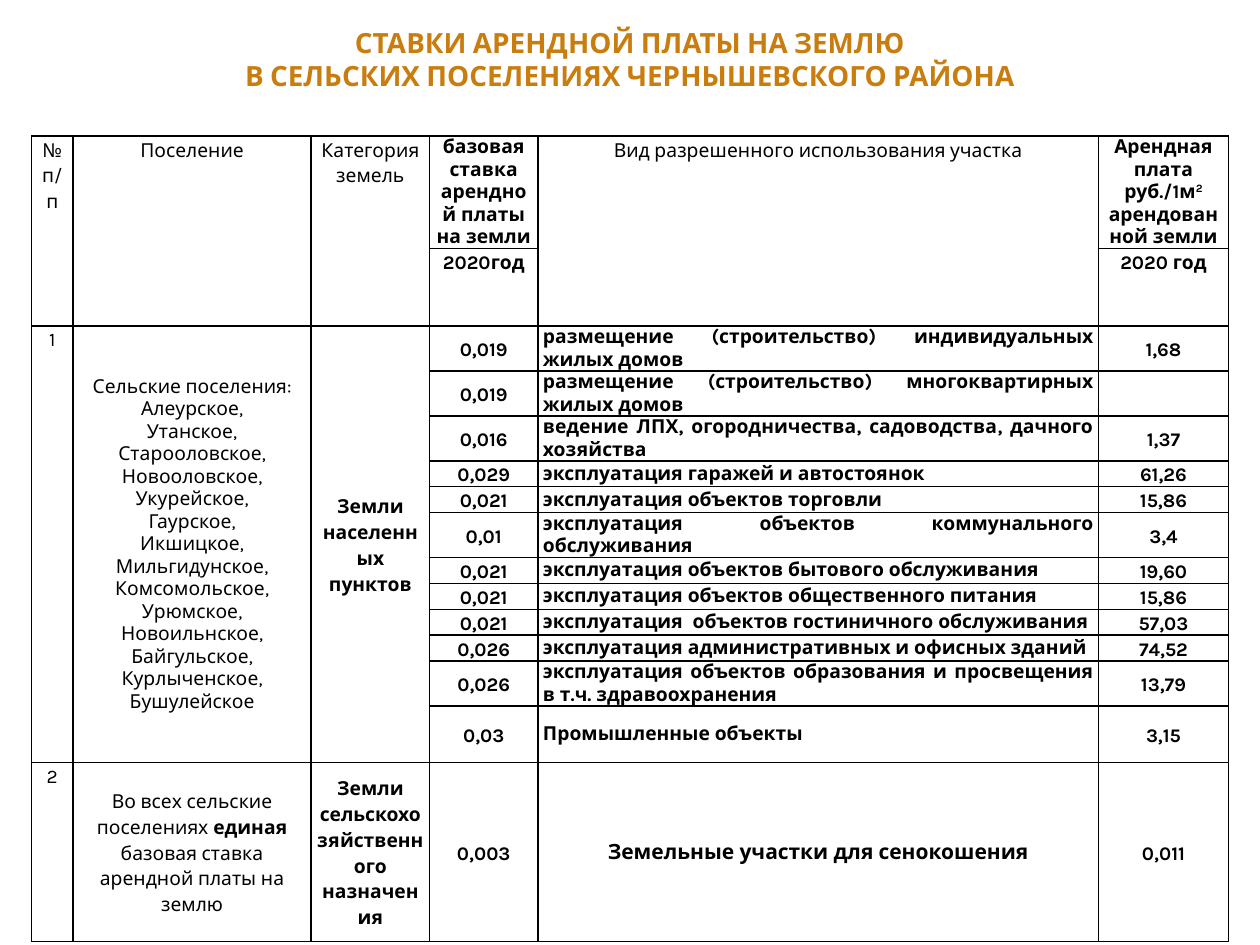
from lxml.etree import SubElement
from pptx import Presentation
from pptx.dml.color import RGBColor
from pptx.enum.text import MSO_ANCHOR, MSO_AUTO_SIZE, PP_ALIGN
from pptx.oxml.ns import qn
from pptx.util import Inches, Pt

BLACK = RGBColor(0, 0, 0)
GOLD = RGBColor(0xC8, 0x7D, 0x0E)

# Content: a line is a string or a list of (text, format) parts
TITLE = ["СТАВКИ АРЕНДНОЙ ПЛАТЫ НА ЗЕМЛЮ",
         "В СЕЛЬСКИХ ПОСЕЛЕНИЯХ ЧЕРНЫШЕВСКОГО РАЙОНА"]
HEAD = {0: "№ п/п", 1: "Поселение", 2: "Категория земель",
        4: "Вид разрешенного использования участка"}
BASE = "базовая ставка арендной платы на земли"
RENT = [("Арендная плата руб./1м", {}), ("2", {"sup": True}),
        (" арендованной земли", {})]
YEARS = {3: "2020год", 5: "2020 год"}
TOWNS = ["Сельские поселения:", "Алеурское,", "Утанское,",
         "Старооловское, Новооловское,", "Укурейское,", "Гаурское,",
         "Икшицкое,", "Мильгидунское, Комсомольское,", "Урюмское,",
         "Новоильнское, Байгульское,", "Курлыченское, Бушулейское"]
RATES = [
    ("0,019", "размещение (строительство) индивидуальных жилых домов", "1,68"),
    ("0,019", "размещение (строительство) многоквартирных жилых домов", ""),
    ("0,016", "ведение ЛПХ, огородничества, садоводства, дачного хозяйства", "1,37"),
    ("0,029", "эксплуатация гаражей и автостоянок", "61,26"),
    ("0,021", "эксплуатация объектов торговли", "15,86"),
    ("0,01", "эксплуатация объектов коммунального обслуживания", "3,4"),
    ("0,021", "эксплуатация объектов бытового обслуживания", "19,60"),
    ("0,021", "эксплуатация объектов общественного питания", "15,86"),
    ("0,021", "эксплуатация  объектов гостиничного обслуживания", "57,03"),
    ("0,026", "эксплуатация административных и офисных зданий", "74,52"),
    ("0,026", "эксплуатация объектов образования и просвещения "
              "в т.ч. здравоохранения", "13,79"),
    ("0,03", "Промышленные объекты", "3,15"),
]
SHARED = [("Во всех сельские поселениях ", {}), ("единая ", {"bold": True}),
          ("базовая ставка арендной платы на землю", {})]

COLS = [0.33, 1.89, 0.94, 0.86, 4.45, 1.03]
ROWS = [0.87, 0.18, 0.18, 0.2, 0.35] + [0.18] * 7 + [0.35, 0.45, 1.42]
FIRST, LAST = 2, len(ROWS) - 1


def write(frame, lines, size=11, font="Karla", color=BLACK, bold=False,
          align=PP_ALIGN.CENTER, space=None):
    for i, line in enumerate(lines):
        para = frame.paragraphs[0] if i == 0 else frame.add_paragraph()
        para.alignment = align
        para.line_spacing = space
        for text, extra in [(line, {})] if isinstance(line, str) else line:
            run = para.add_run()
            run.text = text
            run.font.size = Pt(size)
            run.font.name = font
            run.font.color.rgb = color
            run.font.bold = extra.get("bold", bold)
            if extra.get("sup"):
                run.font._element.set("baseline", "30000")


def style(cell):
    cell.margin_left = cell.margin_right = Inches(0.04)
    cell.margin_top = cell.margin_bottom = 0
    props = cell._tc.get_or_add_tcPr()
    for side in ("a:lnL", "a:lnR", "a:lnT", "a:lnB"):
        edge = SubElement(props, qn(side), w=str(Pt(1)))
        fill = SubElement(edge, qn("a:solidFill"))
        SubElement(fill, qn("a:srgbClr"), val=str(BLACK))
    cell.fill.background()


deck = Presentation()
deck.slide_width, deck.slide_height = Inches(10), Inches(7.5)
slide = deck.slides.add_slide(deck.slide_layouts[5])

# Title
title = slide.shapes.title
title.left, title.top = Inches(0.5), Inches(0.17)
title.width, title.height = Inches(9), Inches(0.75)
frame = title.text_frame
frame.auto_size = MSO_AUTO_SIZE.NONE
frame.vertical_anchor = MSO_ANCHOR.TOP
frame.margin_top = Inches(0.03)
write(frame, TITLE, size=15.9, font="Cabin", color=GOLD, bold=True)

# Table grid
box = slide.shapes.add_table(len(ROWS), len(COLS), Inches(0.25), Inches(1.08),
                             Inches(9.5), Inches(6.09))
table = box.table
table.first_row = table.horz_banding = False
for col, width in zip(table.columns, COLS):
    col.width = Inches(width)
for row, height in zip(table.rows, ROWS):
    row.height = Inches(height)
box.height = Inches(6.09)
for cell in table.iter_cells():
    style(cell)
for c in HEAD:
    table.cell(0, c).merge(table.cell(1, c))
for c in range(3):
    table.cell(FIRST, c).merge(table.cell(LAST - 1, c))


def put(r, c, *lines, mid=True, space=1.15, **form):
    cell = table.cell(r, c)
    cell.vertical_anchor = MSO_ANCHOR.MIDDLE if mid else MSO_ANCHOR.TOP
    write(cell.text_frame, lines, space=space, **form)


# Header rows
for c, text in HEAD.items():
    put(0, c, text, mid=False)
for c, text in ((3, BASE), (5, RENT)):
    put(0, c, text, mid=False, space=None, bold=True)
for c, text in YEARS.items():
    put(1, c, text, mid=False, bold=True)

# Settlement land
put(FIRST, 0, "1", mid=False)
put(FIRST, 1, *TOWNS, space=None)
put(FIRST, 2, "Земли населенных пунктов", bold=True)
for r, (rate, use, rent) in enumerate(RATES, FIRST):
    put(r, 3, rate, bold=True)
    put(r, 4, use, bold=True, space=None, align=PP_ALIGN.JUSTIFY)
    put(r, 5, rent, bold=True)

# Farm land
put(LAST, 0, "2", mid=False)
put(LAST, 1, SHARED)
put(LAST, 2, "Земли сельскохозяйственного назначения", bold=True)
put(LAST, 3, "0,003", bold=True)
put(LAST, 4, "Земельные участки для сенокошения", bold=True, size=12, space=None)
put(LAST, 5, "0,011", bold=True)

deck.save("out.pptx")
